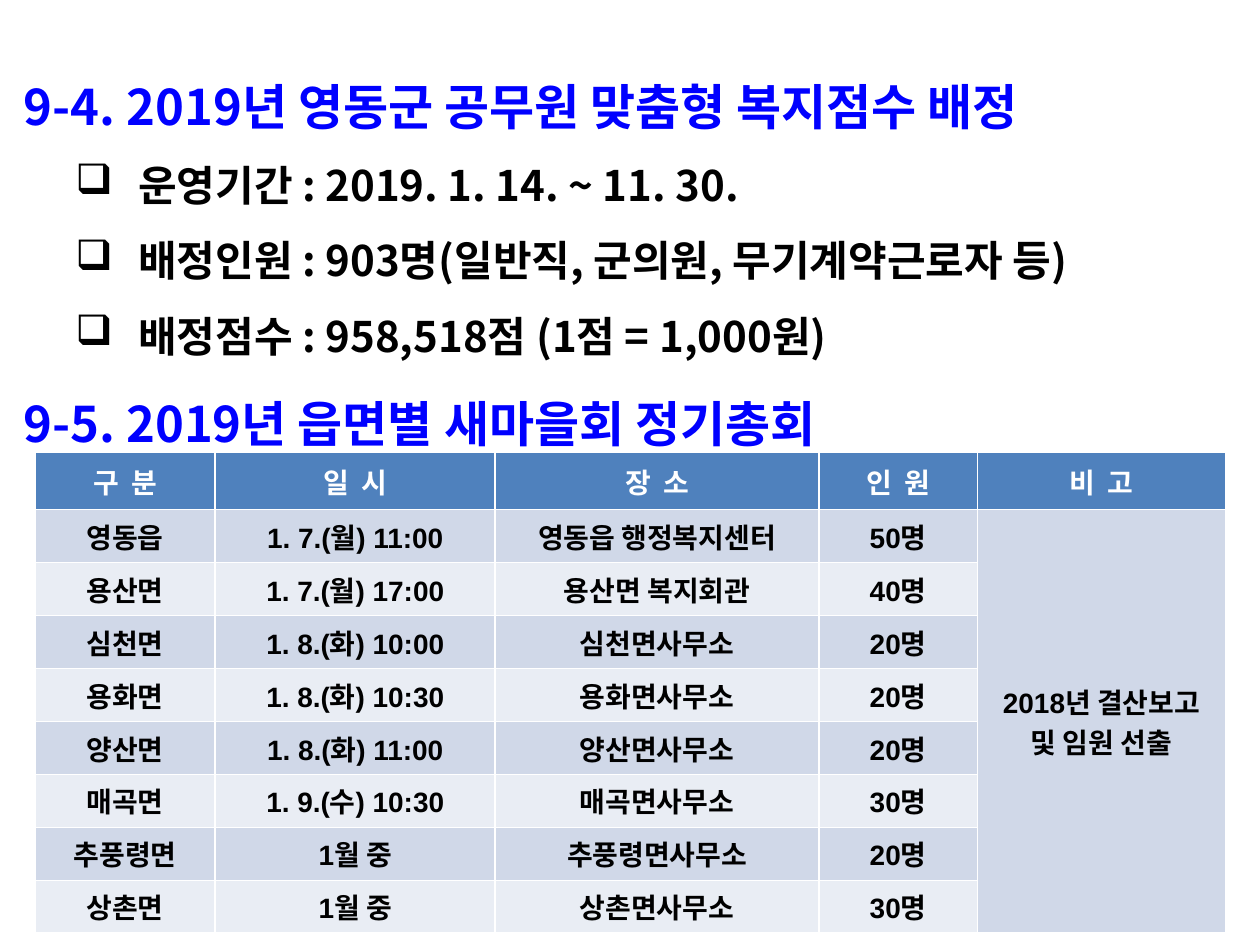
from lxml.etree import SubElement
from pptx import Presentation
from pptx.dml.color import RGBColor
from pptx.enum.text import MSO_ANCHOR as Anchor, MSO_AUTO_SIZE as AutoSize, PP_ALIGN as Align
from pptx.oxml.ns import qn
from pptx.util import Pt

BLUE = RGBColor(0x00, 0x00, 0xFF)
BLACK = RGBColor(0x00, 0x00, 0x00)
WHITE = RGBColor(0xFF, 0xFF, 0xFF)
HEADER_FILL = RGBColor(0x4F, 0x81, 0xBD)
BAND_FILLS = (RGBColor(0xD0, 0xD8, 0xE8), RGBColor(0xE9, 0xED, 0xF4))
KOREAN_FONT = "Noto Sans CJK KR"
TABLE_FONT = "Arial"

WELFARE_HEADING = " 9-4. 2019년 영동군 공무원 맞춤형 복지점수 배정"
WELFARE_ITEMS = [
    "운영기간 : 2019. 1. 14. ~ 11. 30.",
    "배정인원 : 903명(일반직, 군의원, 무기계약근로자 등)",
    "배정점수 : 958,518점 (1점 = 1,000원)",
]
MEETING_HEADING = " 9-5. 2019년 읍면별 새마을회 정기총회"
MEETING_HEADER = ["구  분", "일  시", "장  소", "인  원", "비  고"]
MEETINGS = [
    ["영동읍", "1. 7.(월) 11:00", "영동읍 행정복지센터", "50명"],
    ["용산면", "1. 7.(월) 17:00", "용산면 복지회관", "40명"],
    ["심천면", "1. 8.(화) 10:00", "심천면사무소", "20명"],
    ["용화면", "1. 8.(화) 10:30", "용화면사무소", "20명"],
    ["양산면", "1. 8.(화) 11:00", "양산면사무소", "20명"],
    ["매곡면", "1. 9.(수) 10:30", "매곡면사무소", "30명"],
    ["추풍령면", "1월 중", "추풍령면사무소", "20명"],
    ["상촌면", "1월 중", "상촌면사무소", "30명"],
]
MEETING_NOTE = ["2018년 결산보고", "및 임원 선출"]
COLUMN_WIDTHS = (103, 160, 185, 90.5, 141.9)


def write_text(frame, lines, *, size, color, font=KOREAN_FONT, align=Align.LEFT,
               spacing=None, bullet=None):
    """Write bold lines as the paragraphs of a text frame."""
    for index, line in enumerate(lines):
        para = frame.paragraphs[0] if index == 0 else frame.add_paragraph()
        para.alignment = align
        if spacing:
            para.line_spacing = Pt(spacing)
        if bullet:
            add_bullet(para, bullet)
        span = para.add_run()
        span.text = line
        span.font.size = Pt(size)
        span.font.bold = True
        span.font.color.rgb = color
        span.font.name = font
        SubElement(span.font._element, qn("a:ea"), typeface=KOREAN_FONT)


def add_bullet(para, mark):
    """Give a second-level paragraph a black bullet and a hanging indent."""
    para.level = 1
    props = para._p.get_or_add_pPr()
    props.set("marL", str(Pt(72)))
    props.set("indent", str(Pt(-36)))
    color = SubElement(props, qn("a:buClr"))
    SubElement(color, qn("a:srgbClr"), val=str(BLACK))
    SubElement(props, qn("a:buChar"), char=mark)


def set_up_frame(shape):
    """Make a text shape wrap from its top with a fixed size."""
    frame = shape.text_frame
    frame.word_wrap = True
    frame.auto_size = AutoSize.NONE
    frame.vertical_anchor = Anchor.TOP
    return frame


def add_welfare_section(page, left, top, width, height):
    """Place the title and its bulleted facts in the given box."""
    title_height = 52.5
    title = page.shapes.title
    title.left, title.top = Pt(left), Pt(top)
    title.width, title.height = Pt(width), Pt(title_height)
    write_text(set_up_frame(title), [WELFARE_HEADING],
               size=28, color=BLUE, spacing=52.5)
    box = page.shapes.add_textbox(Pt(left), Pt(top + title_height),
                                  Pt(width), Pt(height - title_height))
    write_text(set_up_frame(box), WELFARE_ITEMS,
               size=24, color=BLACK, spacing=43, bullet="❑")


def add_meeting_section(page, left, top, width, height):
    """Place the meeting heading and its table in the given box."""
    box = page.shapes.add_textbox(Pt(left), Pt(top), Pt(width), Pt(height))
    write_text(set_up_frame(box), [MEETING_HEADING], size=28, color=BLUE,
               align=Align.JUSTIFY, spacing=52.5)
    add_meeting_table(page, left + 20, top + 56.4, 32.4, 28.8)


def add_meeting_table(page, left, top, header_height, row_height):
    """Place the meeting table with a note merged down its last column."""
    count = len(MEETINGS)
    table = page.shapes.add_table(
        count + 1, len(COLUMN_WIDTHS), Pt(left), Pt(top),
        Pt(sum(COLUMN_WIDTHS)), Pt(header_height + count * row_height)).table
    for column, width in zip(table.columns, COLUMN_WIDTHS):
        column.width = Pt(width)
    for index, row in enumerate(table.rows):
        row.height = Pt(row_height if index else header_height)
    for column, label in enumerate(MEETING_HEADER):
        fill_cell(table.cell(0, column), [label], HEADER_FILL, WHITE)
    for index, meeting in enumerate(MEETINGS):
        for column, value in enumerate(meeting):
            fill_cell(table.cell(index + 1, column), [value], BAND_FILLS[index % 2], BLACK)
    last = len(COLUMN_WIDTHS) - 1
    note = table.cell(1, last)
    note.merge(table.cell(count, last))
    fill_cell(note, MEETING_NOTE, BAND_FILLS[0], BLACK)


def fill_cell(cell, lines, fill, color):
    """Fill a table cell and centre its text."""
    cell.fill.solid()
    cell.fill.fore_color.rgb = fill
    cell.vertical_anchor = Anchor.MIDDLE
    write_text(cell.text_frame, lines, size=16, color=color,
               font=TABLE_FONT, align=Align.CENTER)


def main():
    """Build the deck and save it."""
    deck = Presentation()
    deck.slide_width, deck.slide_height = Pt(720), Pt(540)
    page = deck.slides.add_slide(deck.slide_layouts[5])
    add_welfare_section(page, 0, 21, 720, 180)
    add_meeting_section(page, 0, 202.3, 720, 331.2)
    deck.save("out.pptx")


if __name__ == "__main__":
    main()
